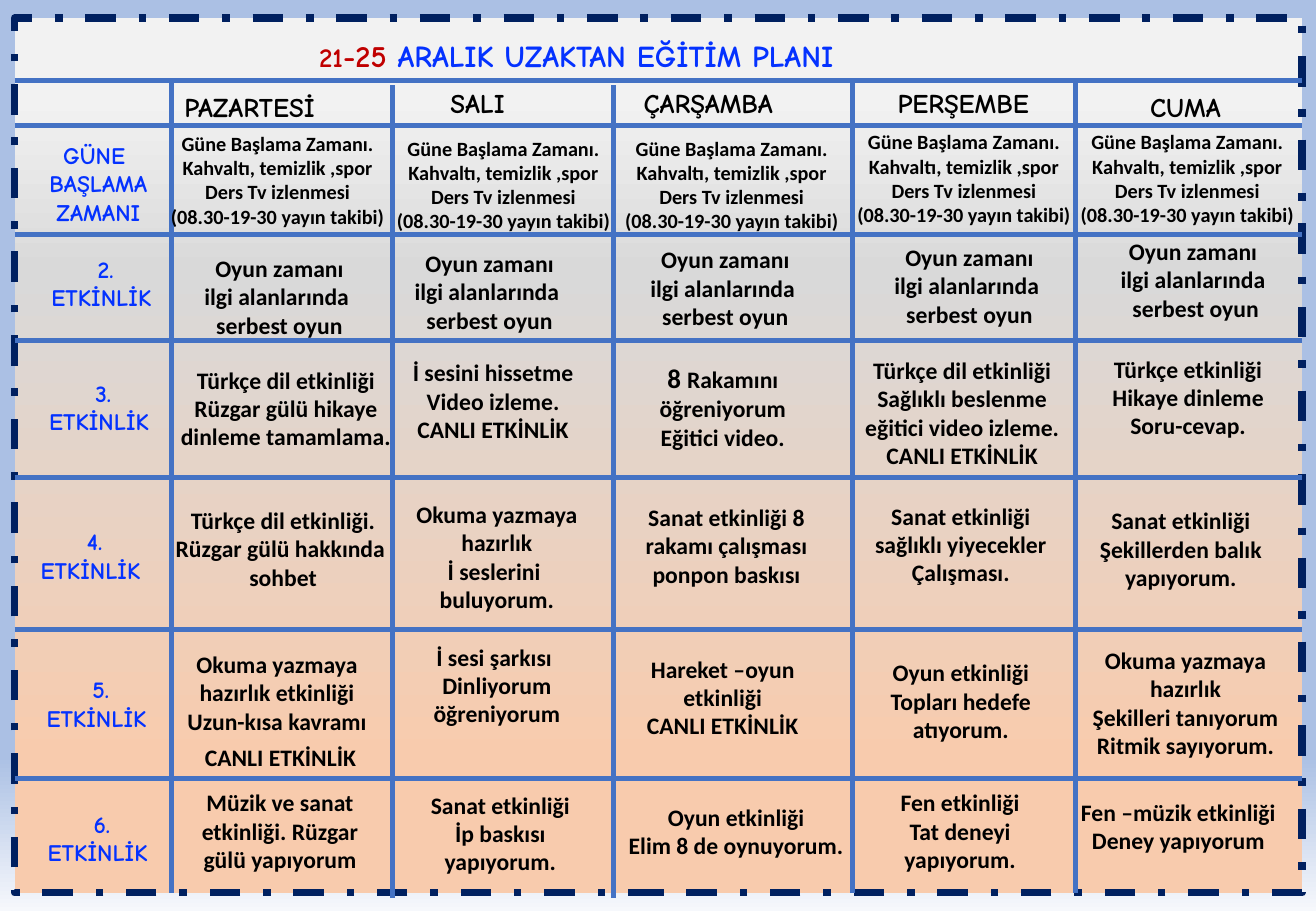
from lxml.etree import SubElement
from pptx import Presentation
from pptx.dml.color import RGBColor
from pptx.enum.dml import MSO_LINE
from pptx.enum.shapes import MSO_CONNECTOR, MSO_SHAPE
from pptx.enum.text import MSO_AUTO_SIZE, PP_ALIGN
from pptx.oxml.ns import qn
from pptx.util import Pt

FORMATS = {
    "date": {"name": "Comic Neue", "size": Pt(16), "bold": True, "color": "C00000"},
    "date end": {"name": "Comic Neue", "size": Pt(18), "bold": True, "color": "C00000"},
    "title": {"name": "Comic Neue", "size": Pt(18), "bold": True, "color": "0432FF"},
    "weekday": {"name": "Comic Neue", "size": Pt(16), "bold": True, "color": "000000"},
    "row label": {"name": "Comic Neue", "size": Pt(14), "bold": True, "color": "0432FF"},
    "morning": {"name": "Calibri", "size": Pt(12), "bold": True, "color": "000000"},
    "activity": {"name": "Calibri", "size": Pt(14), "bold": True, "color": "000000"},
    "number": {"name": "Calibri", "size": Pt(16), "bold": True, "color": "000000"},
}

GRID_COLOR = "4472C4"
FRAME_LEFT, FRAME_TOP, FRAME_WIDTH, FRAME_HEIGHT = 8.64, 10.8, 763.2, 518.4
ROW_LINES = [47.5, 74.2, 139, 201.6, 283, 373, 461.5]
COLUMN_LINES = [(101.5, 47.5), (232.6, 50.4), (363.6, 50.4), (505.4, 47.5), (637.2, 47.5)]
COLUMN_LINE_HEIGHT = 481.7
LINE_FACTOR = 1.22

WEEKDAYS = [
    (102.2, 50.4, 116.6, "PAZARTESİ"),
    (259.9, 47.5, 54.7, "SALI"),
    (374.4, 47.5, 105.8, "ÇARŞAMBA"),
    (524.9, 47.5, 107.3, "PERŞEMBE"),
    (674.6, 50.4, 64.8, "CUMA"),
]
ROW_LABELS = [(14.4, 147.6), (13, 221), (7.9, 308.9), (11.5, 396.7), (12.2, 476.6)]

MORNING = ["Güne Başlama Zamanı.", "Kahvaltı, temizlik ,spor", "Ders Tv izlenmesi",
           "(08.30-19-30 yayın takibi)"]
MORNING_PLACES = [(92.2, 74.2), (226.1, 77), (361.4, 77), (499, 73.4), (631.4, 73.4)]

PLAY = ["Oyun zamanı", "ilgi alanlarında ", "serbest oyun"]
LAST_PLAY = ["Oyun zamanı", "ilgi alanlarında", " serbest oyun"]
LIVE = "CANLI ETKİNLİK"

ACTIVITIES = [
    (90.7, 146.9, 149.8, 4, PLAY),
    (215.3, 144, 149.8, 4, PLAY),
    (355, 141.8, 149.8, 4, PLAY),
    (499.7, 140.4, 149.8, 4, PLAY),
    (632.2, 136.8, 149.8, 4, LAST_PLAY),
    (98.6, 213.1, 141.8, 3, ["Türkçe dil etkinliği", "Rüzgar gülü hikaye dinleme tamamlama."]),
    (217.4, 208.8, 149.8, 3, ["İ sesini hissetme", "Video izleme.", LIVE]),
    (362.2, 211, 132.5, 3,
     [[("8 ", "number"), ("Rakamını öğreniyorum", "activity")], "Eğitici video."]),
    (495.4, 207.4, 149.8, 4,
     ["Türkçe dil etkinliği", "Sağlıklı beslenme eğitici video izleme.", LIVE]),
    (629.3, 206.6, 149.8, 3, ["Türkçe etkinliği", "Hikaye dinleme", "Soru-cevap."]),
    (92.9, 296.4, 149.8, 3, ["Türkçe dil etkinliği.", "Rüzgar gülü hakkında ", "sohbet"]),
    (219.6, 292.8, 149.8, 4, ["Okuma yazmaya hazırlık", "İ seslerini ", "buluyorum."]),
    (355.7, 294.5, 149.8, 3, ["Sanat etkinliği 8 rakamı çalışması ponpon baskısı"]),
    (498.2, 293.8, 142.6, 3, ["Sanat etkinliği", "sağlıklı yiyecekler", "Çalışması."]),
    (625, 296.6, 149.8, 3, ["Sanat etkinliği", "Şekillerden balık yapıyorum."]),
    (89.3, 381.6, 149.8, 3, ["Okuma yazmaya hazırlık etkinliği", "Uzun-kısa kavramı"]),
    (104.4, 437, 123.8, 1, [LIVE]),
    (219.6, 377.3, 149.8, 3, ["İ sesi şarkısı ", "Dinliyorum öğreniyorum"]),
    (360, 384.5, 136.8, 3, ["Hareket –oyun etkinliği", LIVE]),
    (499.7, 386.6, 139.7, 3, ["Oyun etkinliği", "Topları hedefe atıyorum."]),
    (627.8, 379.4, 149.8, 4,
     ["Okuma yazmaya hazırlık", "Şekilleri tanıyorum", "Ritmik sayıyorum."]),
    (100.1, 463.7, 131.8, 3, ["Müzik ve sanat etkinliği. Rüzgar gülü yapıyorum"]),
    (228.2, 465.1, 136.8, 3, ["Sanat etkinliği", "İp baskısı yapıyorum."]),
    (361.4, 472.3, 149.8, 3, ["Oyun etkinliği", "Elim 8 de oynuyorum."]),
    (501.8, 463.7, 134.6, 3, ["Fen etkinliği", "Tat deneyi yapıyorum."]),
    (623.5, 469.4, 149.8, 2, ["Fen –müzik etkinliği", "Deney yapıyorum"]),
]


def color(value):
    return RGBColor.from_string(value)


class PlanSlide:
    def __init__(self, presentation, formats):
        self.formats = formats
        self.slide = presentation.slides.add_slide(presentation.slide_layouts[6])

    def gradient(self, fill, element, stops):
        fill.gradient()
        fill.gradient_angle = 270
        stop_list = element.find(".//" + qn("a:gsLst"))
        for stop in list(stop_list):
            stop_list.remove(stop)
        for position, value in stops:
            stop = SubElement(stop_list, qn("a:gs"), pos=str(position * 1000))
            SubElement(stop, qn("a:srgbClr"), val=value)

    def background(self, stops):
        self.gradient(self.slide.background.fill, self.slide.element, stops)

    def frame(self, left, top, width, height, stops, line_format, line_color):
        shape = self.slide.shapes.add_shape(
            MSO_SHAPE.RECTANGLE, Pt(left), Pt(top), Pt(width), Pt(height))
        shape.shadow.inherit = False
        self.gradient(shape.fill, shape.element, stops)
        shape.line.color.rgb = color(line_color)
        for attribute, value in line_format.items():
            setattr(shape.line, attribute, value)

    def line(self, start_x, start_y, end_x, end_y):
        connector = self.slide.shapes.add_connector(
            MSO_CONNECTOR.STRAIGHT, Pt(start_x), Pt(start_y), Pt(end_x), Pt(end_y))
        connector.line.color.rgb = color(GRID_COLOR)
        connector.line.width = Pt(3)
        SubElement(connector.element.spPr, qn("a:effectLst"))

    def text(self, left, top, width, lines, paragraphs, format_name,
             wrap=True, alignment=PP_ALIGN.CENTER):
        height = 7.2 + lines * self.formats[format_name]["size"].pt * LINE_FACTOR
        shape = self.slide.shapes.add_textbox(Pt(left), Pt(top), Pt(width), Pt(height))
        frame = shape.text_frame
        frame.word_wrap = wrap
        frame.auto_size = MSO_AUTO_SIZE.SHAPE_TO_FIT_TEXT
        for index, content in enumerate(paragraphs):
            paragraph = frame.add_paragraph() if index else frame.paragraphs[0]
            paragraph.alignment = alignment
            runs = [(content, format_name)] if isinstance(content, str) else content
            for words, run_format in runs:
                self.run(paragraph, words, run_format)

    def run(self, paragraph, words, format_name):
        run = paragraph.add_run()
        run.text = words
        for attribute, value in self.formats[format_name].items():
            if attribute == "color":
                run.font.color.rgb = color(value)
            else:
                setattr(run.font, attribute, value)


def main():
    presentation = Presentation()
    presentation.slide_width = Pt(780)
    presentation.slide_height = Pt(540)
    plan = PlanSlide(presentation, FORMATS)
    plan.background([(74, "ABC0E4"), (83, "ABC0E4"), (100, "F6F8FC"), (100, "C7D5ED")])
    plan.frame(FRAME_LEFT, FRAME_TOP, FRAME_WIDTH, FRAME_HEIGHT,
               [(9, "F2F2F2"), (29, "D9D9D9"), (85, "F8CBAD")],
               {"width": Pt(4.5), "dash_style": MSO_LINE.DASH_DOT}, "002060")
    for y in ROW_LINES:
        plan.line(FRAME_LEFT, y, FRAME_LEFT + FRAME_WIDTH, y)
    for x, top in COLUMN_LINES:
        plan.line(x, top, x, top + COLUMN_LINE_HEIGHT)

    title = [(" 21", "date"), ("-25", "date end"), (" ARALIK UZAKTAN EĞİTİM PLANI", "title")]
    plan.text(176.4, 18.7, 542.2, 1, [title], "title", alignment=PP_ALIGN.LEFT)
    for left, top, width, weekday in WEEKDAYS:
        plan.text(left, top, width, 1, [weekday], "weekday", False, PP_ALIGN.LEFT)
    plan.text(16.6, 79.9, 83.5, 3, ["GÜNE ", "BAŞLAMA", "ZAMANI"], "row label", False)
    for number, (left, top) in enumerate(ROW_LABELS, 2):
        plan.text(left, top, 96.5, 3, [f"{number}.", "ETKİNLİK "], "row label", False)
    for left, top in MORNING_PLACES:
        plan.text(left, top, 144.7, 4, MORNING, "morning")
    for left, top, width, lines, paragraphs in ACTIVITIES:
        plan.text(left, top, width, lines, paragraphs, "activity")
    presentation.save("out.pptx")


if __name__ == "__main__":
    main()
